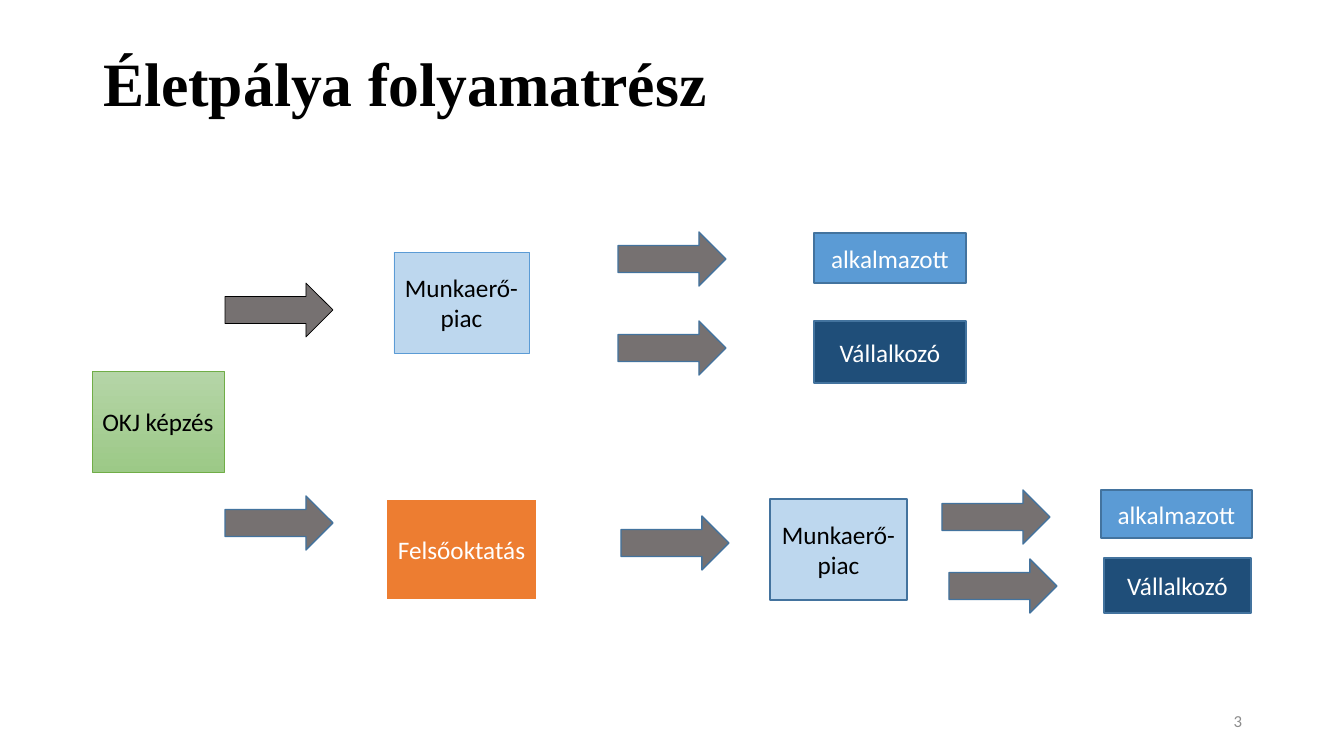
from pptx import Presentation
from pptx.dml.color import RGBColor
from pptx.enum.shapes import MSO_SHAPE
from pptx.enum.text import MSO_ANCHOR, PP_ALIGN
from pptx.util import Emu, Pt

EMU_PER_PX = 914400 / 100.8
BLACK, WHITE = "000000", "FFFFFF"
GREY, STEEL = "767171", "43739E"
PALE, BLUE, NAVY, ORANGE = "BDD7EE", "5B9BD5", "1F4E79", "ED7D31"
GREEN_TOP, GREEN_BOTTOM, GREEN_EDGE = "B5D5A7", "9CC987", "70AD47"


def px(length):
    return Emu(round(length * EMU_PER_PX))


def color(value):
    return RGBColor.from_string(value)


class CareerSlide:
    font = "Calibri"
    arrow_size = (108, 54)

    def __init__(self, deck):
        self.page = deck.slides.add_slide(deck.slide_layouts[5])

    def set_text(self, shape, text, size, ink, align, font=None, bold=False):
        frame = shape.text_frame
        frame.text = text
        frame.word_wrap = True
        frame.vertical_anchor = MSO_ANCHOR.MIDDLE
        para = frame.paragraphs[0]
        para.alignment = align
        span = para.runs[0]
        span.font.name = font or self.font
        span.font.size = Pt(size)
        span.font.bold = bold
        span.font.color.rgb = color(ink)

    def title(self, text, left, top, width, height):
        box = self.page.shapes.title
        box.left, box.top, box.width, box.height = map(px, (left, top, width, height))
        self.set_text(box, text, 44, BLACK, PP_ALIGN.LEFT, "Times New Roman", True)
        box.text_frame.paragraphs[0].line_spacing = 0.9

    def label(self, text, *place):
        box = self.page.shapes.add_textbox(*map(px, place))
        self.set_text(box, text, 12, "8C8C8C", PP_ALIGN.RIGHT)

    def shape(self, kind, place, fill, edge, weight):
        shape = self.page.shapes.add_shape(kind, *map(px, place))
        shape.shadow.inherit = False
        if isinstance(fill, tuple):
            shape.fill.gradient()
            shape.fill.gradient_angle = 270
            for stop, shade, position in zip(shape.fill.gradient_stops, fill, (0, 1)):
                stop.color.rgb = color(shade)
                stop.position = position
        else:
            shape.fill.solid()
            shape.fill.fore_color.rgb = color(fill)
        shape.line.color.rgb = color(edge)
        shape.line.width = Pt(weight)
        return shape

    def box(self, text, place, fill, ink=WHITE, edge=STEEL, weight=1):
        box = self.shape(MSO_SHAPE.RECTANGLE, place, fill, edge, weight)
        box.text_frame.margin_left = box.text_frame.margin_right = px(8)
        self.set_text(box, text, 18, ink, PP_ALIGN.CENTER)

    def arrow(self, left, top, edge=STEEL, weight=1):
        place = (left, top, *self.arrow_size)
        self.shape(MSO_SHAPE.RIGHT_ARROW, place, GREY, edge, weight)


def main():
    deck = Presentation()
    deck.slide_width, deck.slide_height = px(1344), px(756)
    slide = CareerSlide(deck)

    # Title and slide number
    slide.title("Életpálya folyamatrész", 93, 40, 1159, 94)
    slide.label("3", 950, 701, 302, 40)

    # Starting point
    slide.box("OKJ képzés", (92, 371, 132, 101), (GREEN_TOP, GREEN_BOTTOM),
              BLACK, GREEN_EDGE, 0.5)

    # Arrows
    slide.arrow(225, 283, BLACK, 0.5)
    for left, top in ((225, 496), (621, 516), (618, 232), (618, 321),
                      (942, 490), (949, 559)):
        slide.arrow(left, top)

    # Upper branch: straight to the labour market
    slide.box("Munkaerő-piac", (394, 252, 135, 101), PALE, BLACK, BLUE, 0.5)
    slide.box("alkalmazott", (814, 233, 152, 50), BLUE)
    slide.box("Vállalkozó", (814, 321, 152, 62), NAVY)

    # Lower branch: through higher education
    slide.box("Felsőoktatás", (386, 499, 151, 101), ORANGE, WHITE, WHITE, 1.5)
    slide.box("Munkaerő-piac", (770, 499, 137, 101), PALE, BLACK)
    slide.box("alkalmazott", (1101, 490, 151, 48), BLUE)
    slide.box("Vállalkozó", (1104, 558, 147, 55), NAVY)

    deck.save("out.pptx")


if __name__ == "__main__":
    main()
